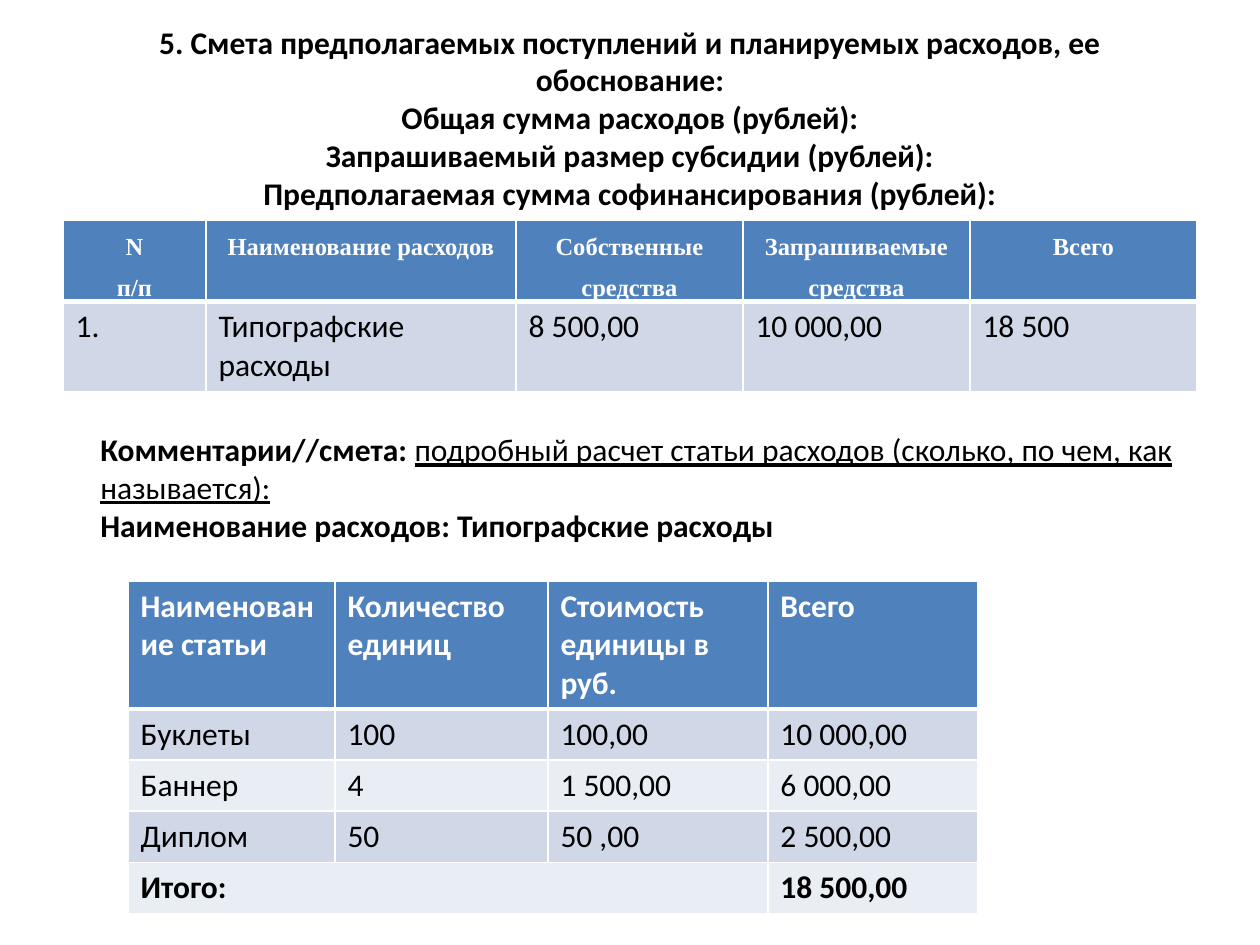
"""Build the budget estimate slide with its two expense tables."""
from dataclasses import dataclass

from lxml import etree
from pptx import Presentation
from pptx import util as u
from pptx.dml.color import RGBColor
from pptx.enum import text
from pptx.oxml.ns import qn

SCALE = 914400 / 126


def px(n):
    return u.Emu(round(n * SCALE))


@dataclass(frozen=True)
class Theme:
    font: str = "Calibri"
    serif: str = "Times New Roman"
    size: int = 18
    small: int = 14
    ink: str = "000000"
    white: str = "FFFFFF"
    header: str = "4F81BD"
    bands: tuple = ("D0D8E8", "E9EDF4")
    thin: int = 1
    thick: int = 3


THEME = Theme()


def write(p, words, font=THEME.font, size=THEME.size, color=THEME.ink,
          bold=False, underline=False, align=None, spacing=None):
    p.alignment = align
    p.line_spacing = spacing
    for i, line in enumerate(words.split("\n")):
        if i:
            p.add_line_break()
        r = p.add_run()
        r.text = line
        r.font.name = font
        r.font.size = u.Pt(size)
        r.font.color.rgb = RGBColor.from_string(color)
        r.font.bold = bold
        r.font.underline = underline


class Deck:
    def __init__(self, prs, theme):
        self.theme = theme
        self.s = prs.slides.add_slide(prs.slide_layouts[6])

    def textbox(self, x, y, w, h, paragraphs, anchor=text.MSO_ANCHOR.TOP):
        tf = self.s.shapes.add_textbox(px(x), px(y), px(w), px(h)).text_frame
        tf.word_wrap = True
        tf.auto_size = text.MSO_AUTO_SIZE.NONE
        tf.vertical_anchor = anchor
        for i, runs in enumerate(paragraphs):
            p = tf.add_paragraph() if i else tf.paragraphs[0]
            for words, style in runs:
                write(p, words, **style)

    def borders(self, cell, top, bottom):
        tc_pr = cell._tc.get_or_add_tcPr()
        sides = {"L": self.theme.thin, "R": self.theme.thin, "T": top, "B": bottom}
        for i, (side, width) in enumerate(sides.items()):
            ln = etree.Element(qn(f"a:ln{side}"), w=str(u.Pt(width)))
            fill = etree.SubElement(ln, qn("a:solidFill"))
            etree.SubElement(fill, qn("a:srgbClr"), val=self.theme.white)
            tc_pr.insert(i, ln)

    def table(self, x, y, widths, heights, rows, head, head_margins=None, bold_last=False):
        t = self.theme
        tbl = self.s.shapes.add_table(len(rows), len(widths), px(x), px(y),
                                      px(sum(widths)), px(sum(heights))).table
        for col, w in zip(tbl.columns, widths):
            col.width = px(w)
        for i, (row, h) in enumerate(zip(rows, heights)):
            tbl.rows[i].height = px(h)
            last = bold_last and i == len(rows) - 1
            style = {"color": t.white, "bold": True, **head} if i == 0 else {"bold": last}
            for j, words in enumerate(row):
                cell = tbl.cell(i, j)
                cell.fill.solid()
                cell.fill.fore_color.rgb = RGBColor.from_string(
                    t.bands[(i - 1) % 2] if i else t.header)
                self.borders(cell, t.thick if i == 1 else t.thin,
                             t.thin if i else t.thick)
                if i == 0 and head_margins:
                    side, edge = head_margins
                    cell.margin_left = cell.margin_right = px(side)
                    cell.margin_top = cell.margin_bottom = px(edge)
                tf = cell.text_frame
                for k, line in enumerate(words.split("\n") if words else []):
                    write(tf.add_paragraph() if k else tf.paragraphs[0], line, **style)
        return tbl


def main():
    prs = Presentation()
    prs.slide_width, prs.slide_height = px(1260), px(945)
    deck = Deck(prs, THEME)
    center = text.PP_ALIGN.CENTER
    bold = {"bold": True}

    title = ("5. Смета предполагаемых поступлений и планируемых расходов, ее обоснование:\n"
             "Общая сумма расходов (рублей):\n"
             "Запрашиваемый размер субсидии (рублей):\n"
             "Предполагаемая сумма софинансирования (рублей):")
    deck.textbox(63, 38, 1134, 158, [[(title, {"bold": True, "align": center})]],
                 text.MSO_ANCHOR.MIDDLE)

    deck.table(63, 220, [143, 310, 227, 227, 227], [80, 90], [
        ["N\nп/п", "Наименование расходов", "Собственные средства",
         "Запрашиваемые средства", "Всего"],
        ["1.", "Типографские расходы", "8 500,00", "10 000,00", "18 500"],
    ], {"font": THEME.serif, "size": THEME.small, "align": center, "spacing": 1.5}, (9, 0))

    deck.textbox(88, 424, 1132, 127, [
        [("Комментарии//смета: ", bold),
         ("подробный расчет статьи расходов (сколько, по чем, как называется):",
          {"underline": True})],
        [("Наименование расходов: Типографские расходы", bold)],
    ])

    tbl = deck.table(128, 581, [207, 213, 220, 210], [126] + [50] * 4, [
        ["Наименование статьи", "Количество единиц", "Стоимость единицы в руб.", "Всего"],
        ["Буклеты", "100", "100,00", "10 000,00"],
        ["Баннер", "4", "1 500,00", "6 000,00"],
        ["Диплом", "50", "50 ,00", "2 500,00"],
        ["Итого:", "", "", "18 500,00"],
    ], {}, bold_last=True)
    tbl.cell(4, 0).merge(tbl.cell(4, 2))

    prs.save("out.pptx")


if __name__ == "__main__":
    main()
